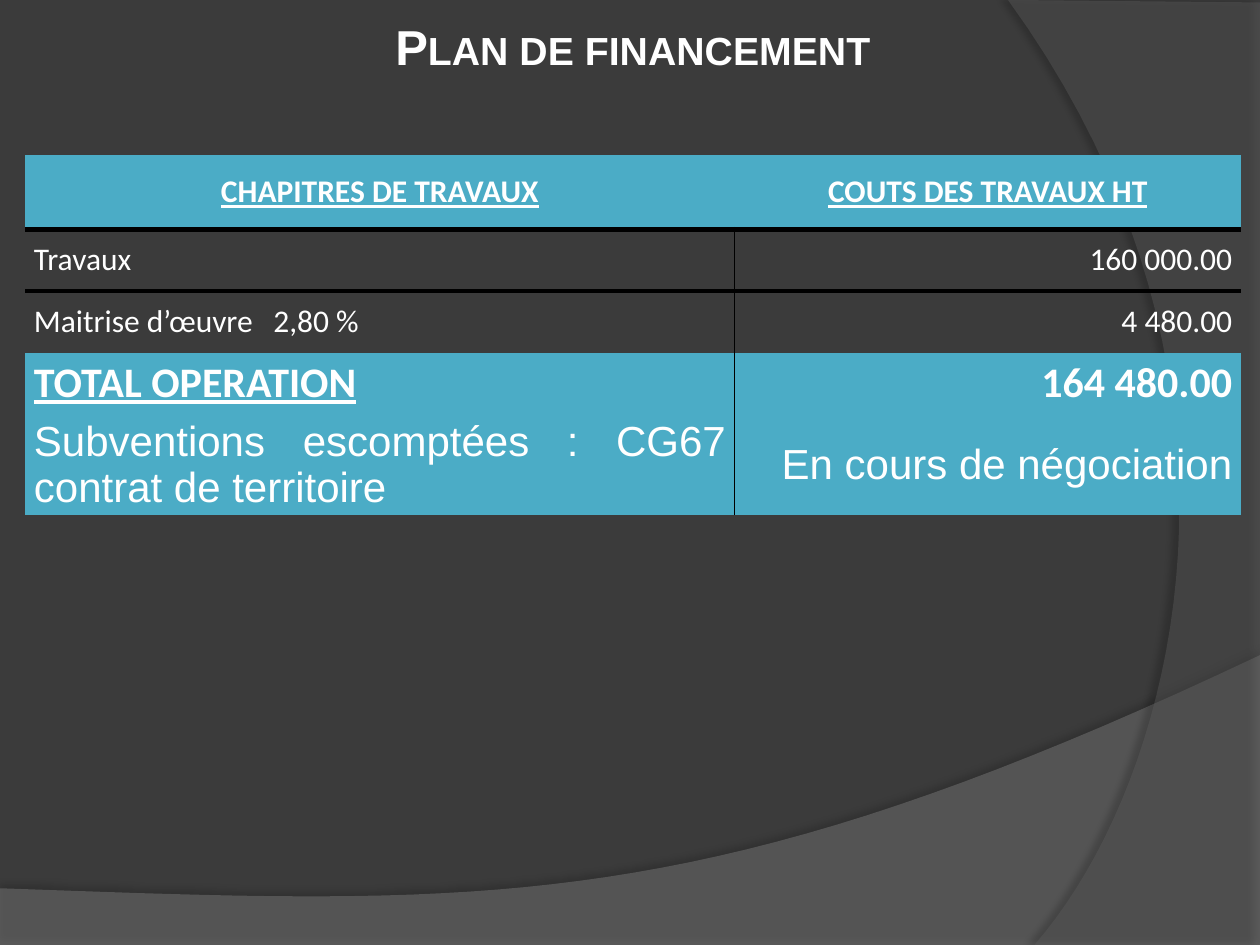
from dataclasses import dataclass

from lxml.etree import SubElement
from pptx import Presentation
from pptx.dml.color import RGBColor
from pptx.enum.text import MSO_ANCHOR, PP_ALIGN
from pptx.oxml.ns import qn
from pptx.util import Inches, Pt


@dataclass(frozen=True)
class Theme:
    background: str = "3B3B3B"
    wave: str = "7F7F7F"
    arc: str = "5E5E5E"
    accent: str = "4BACC6"
    text: str = "FFFFFF"
    line: str = "000000"
    heading_font: str = "Arial"
    table_font: str = "Calibri"
    title_size: int = 28
    body_size: int = 18
    total_size: int = 24
    thin: int = 1
    thick: int = 3
    plain_table: str = "{2D5ABB26-0587-4C30-8999-92F81FD0307C}"


@dataclass(frozen=True)
class Entry:
    text: str
    align: PP_ALIGN
    size: int = Theme.body_size
    font: str = Theme.table_font
    bold: bool = False
    underline: bool = False
    space_after: int = 0


def curve(start, first, second, end, steps=40):
    points = []
    for step in range(steps + 1):
        t = step / steps
        weights = ((1 - t) ** 3, 3 * t * (1 - t) ** 2, 3 * t**2 * (1 - t), t**3)
        points.append(tuple(
            sum(weight * value for weight, value in zip(weights, axis))
            for axis in zip(start, first, second, end)
        ))
    return points


def add_color(parent, color, opacity=100):
    node = SubElement(parent, qn("a:srgbClr"), val=color)
    SubElement(node, qn("a:alpha"), val=str(opacity * 1000))


class SlideBuilder:
    COLUMNS, ROWS = 100, 75

    def __init__(self, deck, theme):
        self.theme = theme
        self.column = deck.slide_width / self.COLUMNS
        self.row = deck.slide_height / self.ROWS
        self.page = deck.slides.add_slide(deck.slide_layouts[6])
        fill = self.page.background.fill
        fill.solid()
        fill.fore_color.rgb = RGBColor.from_string(theme.background)

    def place(self, left, top, width, height):
        return (round(left * self.column), round(top * self.row),
                round(width * self.column), round(height * self.row))

    def ribbon(self, points, color, opacity, shadow_opacity, distance, angle):
        start, *rest = [(x * self.column, y * self.row) for x, y in points]
        builder = self.page.shapes.build_freeform(*start)
        builder.add_line_segments(rest)
        shape = builder.convert_to_shape()
        shape.shadow.inherit = False
        shape.line.fill.background()
        shape.fill.solid()
        shape.fill.fore_color.rgb = RGBColor.from_string(color)
        fill_color = shape.element.spPr.find(".//" + qn("a:srgbClr"))
        SubElement(fill_color, qn("a:alpha"), val=str(opacity * 1000))
        effects = shape.element.spPr.find(qn("a:effectLst"))
        shadow = SubElement(
            effects, qn("a:outerShdw"), blurRad=str(Pt(4)),
            dist=str(Pt(distance)), dir=str(angle * 60000),
            algn="ctr", rotWithShape="0",
        )
        add_color(shadow, self.theme.line, shadow_opacity)

    def set_text(self, para, entry):
        para.text = entry.text
        para.alignment = entry.align
        para.space_after = Pt(entry.space_after)
        if "\t" in entry.text:
            tabs = SubElement(para._p.get_or_add_pPr(), qn("a:tabLst"))
            SubElement(tabs, qn("a:tab"), pos=str(Inches(1.9)), algn="l")
        font = para.font
        font.name = entry.font
        font.size = Pt(entry.size)
        font.bold = entry.bold
        font.underline = entry.underline
        font.color.rgb = RGBColor.from_string(self.theme.text)
        return font

    def title(self, text, left, top, width, height):
        box = self.page.shapes.add_textbox(*self.place(left, top, width, height))
        frame = box.text_frame
        frame.word_wrap = True
        frame.vertical_anchor = MSO_ANCHOR.BOTTOM
        frame.margin_left, frame.margin_right = Inches(0.1), Inches(0.05)
        frame.margin_top = frame.margin_bottom = 0
        entry = Entry(text, PP_ALIGN.CENTER, self.theme.title_size,
                      self.theme.heading_font, bold=True)
        self.set_text(frame.paragraphs[0], entry)._element.set("cap", "small")

    def border(self, cell, side, width):
        line = SubElement(cell._tc.get_or_add_tcPr(), qn("a:ln" + side),
                          w=str(Pt(width)))
        add_color(SubElement(line, qn("a:solidFill")), self.theme.line)

    def table(self, entries, filled, left, top, widths, heights):
        area = self.place(left, top, sum(widths), sum(heights))
        table = self.page.shapes.add_table(len(heights), len(widths), *area).table
        table._tbl.tblPr.find(qn("a:tableStyleId")).text = self.theme.plain_table
        for column, width in zip(table.columns, widths):
            column.width = round(width * self.column)
        for row, height in zip(table.rows, heights):
            row.height = round(height * self.row)
        for r, line in enumerate(entries):
            for c, entry in enumerate(line):
                cell = table.cell(r, c)
                cell.vertical_anchor = MSO_ANCHOR.MIDDLE
                cell.margin_left = cell.margin_right = Inches(0.07)
                cell.margin_top = cell.margin_bottom = 0
                if r > 0:
                    self.border(cell, "R" if c == 0 else "L", self.theme.thin)
                if r < 2:
                    self.border(cell, "B" if r == 0 else "T", self.theme.thick)
                if r in filled:
                    cell.fill.solid()
                    cell.fill.fore_color.rgb = RGBColor.from_string(self.theme.accent)
                else:
                    cell.fill.background()
                self.set_text(cell.text_frame.paragraphs[0], entry)


def main():
    theme = Theme()
    deck = Presentation()
    deck.slide_width, deck.slide_height = Inches(10), Inches(7.5)
    slide = SlideBuilder(deck, theme)

    wave = [(0, 75), (100, 75)]
    wave += curve((100, 52), (55.9, 72.9), (39.1, 71.9), (0, 70.5))
    slide.ribbon(wave, theme.wave, 45, 35, 3.5, 270)
    arc = [(100, 0.2), (100, 75)]
    arc += curve((82.1, 75), (93.5, 61.9), (101.8, 30), (80, 0))
    slide.ribbon(arc, theme.arc, 40, 45, 4, 180)

    slide.title("Plan de financement", 0, 0, 100, 6)

    left, right, center = PP_ALIGN.JUSTIFY, PP_ALIGN.RIGHT, PP_ALIGN.CENTER
    header = dict(align=center, bold=True, underline=True, space_after=6)
    grant = dict(size=theme.total_size, font=theme.heading_font)
    entries = [
        (Entry("CHAPITRES DE TRAVAUX", **header),
         Entry("COUTS DES TRAVAUX HT", **header)),
        (Entry("Travaux", left), Entry("160 000.00", right)),
        (Entry("Maitrise d’œuvre\t2,80 %", left), Entry("4 480.00", right)),
        (Entry("TOTAL OPERATION", left, theme.total_size, bold=True, underline=True),
         Entry("164 480.00", right, theme.total_size, bold=True)),
        (Entry("Subventions escomptées : CG67 contrat de territoire", left, **grant),
         Entry("En cours de négociation", right, **grant)),
    ]
    slide.table(entries, {0, 3, 4}, 2, 12.3, (56.3, 40.2), (5.9,) + (4.9,) * 4)

    deck.save("out.pptx")


if __name__ == "__main__":
    main()
